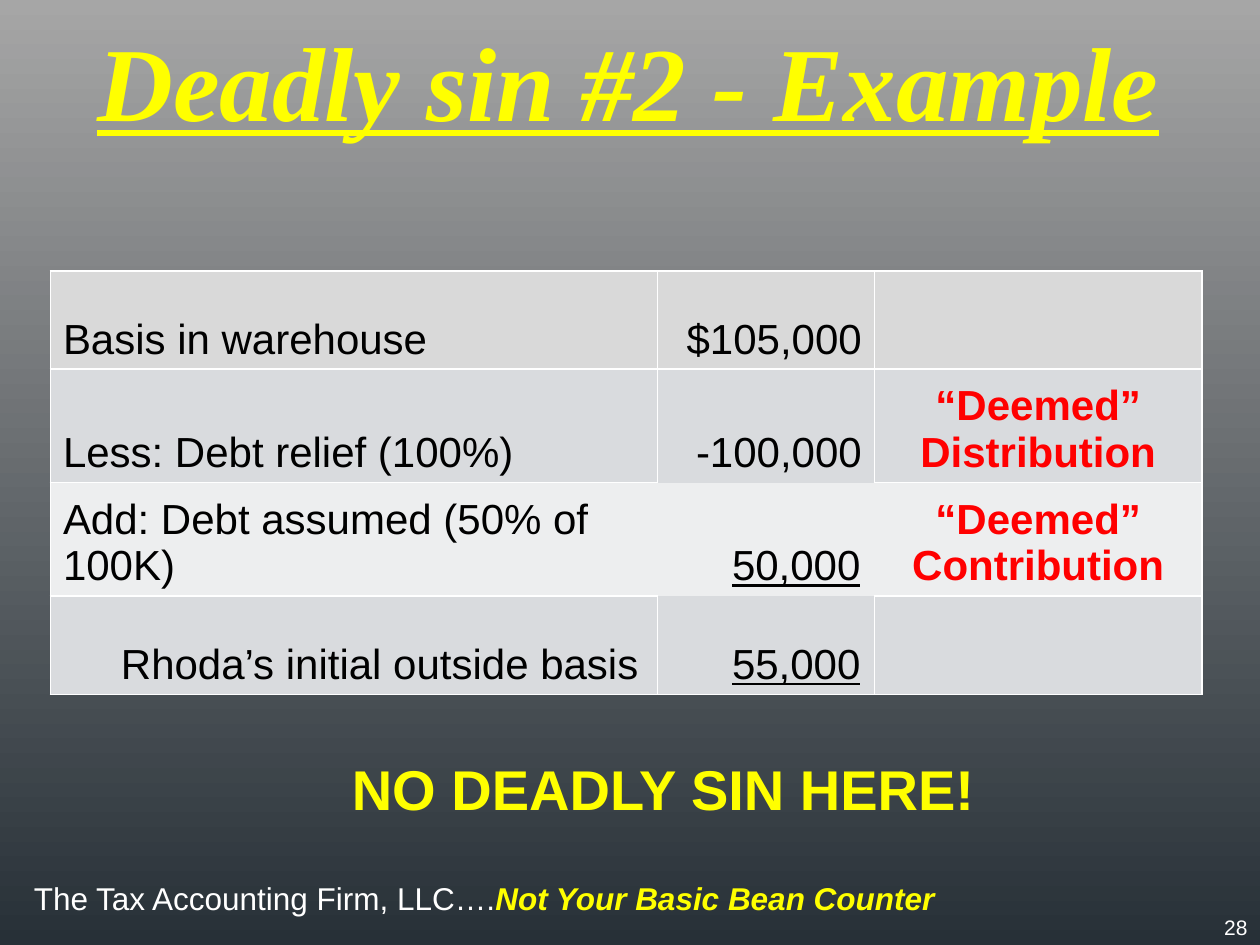
from dataclasses import dataclass

from pptx import Presentation
from pptx.dml.color import RGBColor
from pptx.enum.text import MSO_ANCHOR as Anchor, MSO_AUTO_SIZE as AutoSize, PP_ALIGN as Align
from pptx.oxml import parse_xml
from pptx.oxml.ns import nsdecls
from pptx.util import Inches, Pt


@dataclass(frozen=True)
class Theme:
    body_font: str = "Arial"
    title_font: str = "Times New Roman"
    yellow: str = "FFFF00"
    white: str = "FFFFFF"
    black: str = "000000"
    red: str = "FF0000"
    top: str = "A6A6A6"
    bottom: str = "273037"
    row_fills: tuple = ("D9D9D9", "D9DBDE", "EDEEEF", "D9DBDE")
    title: int = 60
    callout: int = 32
    table: int = 24
    footer: int = 18
    number: int = 12


THEME = Theme()
COLUMN_WIDTHS = (4.82, 1.72, 2.6)
ROW_HEIGHTS = (0.78, 0.9, 0.9, 0.78)
ROWS = (
    ("Basis in warehouse", "$105,000", ""),
    ("Less: Debt relief (100%)", "-100,000", "“Deemed” Distribution"),
    ("Add: Debt assumed (50% of 100K)", "\t50,000", "“Deemed” Contribution"),
    ("Rhoda’s initial outside basis", "\t55,000", ""),
)
OPEN_SIDES = {(1, 1): "B", (2, 0): "R", (2, 1): "LRTB", (2, 2): "L", (3, 1): "T"}


def style_font(font, size, color, name=THEME.body_font, bold=False, italic=False, underline=False):
    font.name, font.size = name, Pt(size)
    font.bold, font.italic, font.underline = bold, italic, underline
    font.color.rgb = RGBColor.from_string(color)


def paint_background(slide):
    fill = slide.background.fill
    fill.gradient()
    fill.gradient_angle = 270
    for stop, color, position in zip(fill.gradient_stops, (THEME.top, THEME.bottom), (0, 1)):
        stop.color.rgb = RGBColor.from_string(color)
        stop.position = position


def add_title(slide, text):
    title = slide.shapes.title
    title.left, title.top = Inches(0.4), Inches(0.08)
    title.width, title.height = Inches(9.17), Inches(1.11)
    frame = title.text_frame
    frame.auto_size = AutoSize.NONE
    frame.vertical_anchor = Anchor.TOP
    paragraph = frame.paragraphs[0]
    paragraph.text = text
    paragraph.alignment = Align.CENTER
    style_font(paragraph.font, THEME.title, THEME.yellow, THEME.title_font, True, True, True)


def add_text(slide, left, top, width, height, text, align=Align.LEFT, anchor=Anchor.TOP):
    box = slide.shapes.add_textbox(Inches(left), Inches(top), Inches(width), Inches(height))
    frame = box.text_frame
    frame.word_wrap = True
    frame.vertical_anchor = anchor
    paragraph = frame.paragraphs[0]
    paragraph.text = text
    paragraph.alignment = align
    return paragraph


def add_footer(slide):
    paragraph = add_text(slide, 0.17, 6.93, 7.59, 0.4, "")
    for text, color, strong in (
        ("The Tax Accounting Firm, LLC….", THEME.white, False),
        ("Not Your Basic Bean Counter", THEME.yellow, True),
    ):
        run = paragraph.add_run()
        run.text = text
        style_font(run.font, THEME.footer, color, bold=strong, italic=strong)


def set_borders(cell, open_sides):
    properties = cell._tc.get_or_add_tcPr()
    for index, side in enumerate("LRTB"):
        paint = "<a:noFill/>"
        if side not in open_sides:
            paint = f'<a:solidFill><a:srgbClr val="{THEME.white}"/></a:solidFill>'
        line = parse_xml(f'<a:ln{side} {nsdecls("a")} w="{Pt(1)}">{paint}</a:ln{side}>')
        properties.insert(index, line)


def set_amount_tab(cell, paragraph):
    cell.margin_left = Inches(0.14)
    position = Inches(COLUMN_WIDTHS[1] - 0.14 - 0.11)
    paragraph._p.get_or_add_pPr().append(
        parse_xml(f'<a:tabLst {nsdecls("a")}><a:tab pos="{position}" algn="r"/></a:tabLst>')
    )


def fill_cell(cell, text, row, column):
    cell.fill.solid()
    cell.fill.fore_color.rgb = RGBColor.from_string(THEME.row_fills[row])
    cell.vertical_anchor = Anchor.BOTTOM
    set_borders(cell, OPEN_SIDES.get((row, column), ""))
    if not text:
        return
    paragraph = cell.text_frame.paragraphs[0]
    paragraph.text = text
    underlined = text.startswith("\t")
    if underlined:
        set_amount_tab(cell, paragraph)
    else:
        paragraph.alignment = (Align.LEFT, Align.RIGHT, Align.CENTER)[column]
    is_note = column == 2
    color = THEME.red if is_note else THEME.black
    style_font(paragraph.font, THEME.table, color, bold=is_note, underline=underlined)


def add_basis_table(slide):
    frame = slide.shapes.add_table(
        len(ROWS), len(COLUMN_WIDTHS), Inches(0.4), Inches(2.15),
        Inches(sum(COLUMN_WIDTHS)), Inches(sum(ROW_HEIGHTS)),
    )
    table = frame.table
    table.first_row = table.horz_banding = False
    for column, width in zip(table.columns, COLUMN_WIDTHS):
        column.width = Inches(width)
    for row, (values, height) in enumerate(zip(ROWS, ROW_HEIGHTS)):
        table.rows[row].height = Inches(height)
        for column, text in enumerate(values):
            fill_cell(table.cell(row, column), text, row, column)
    table.cell(len(ROWS) - 1, 0).margin_left = Inches(0.56)


def main():
    presentation = Presentation()
    presentation.slide_width, presentation.slide_height = Inches(10), Inches(7.5)
    slide = presentation.slides.add_slide(presentation.slide_layouts[5])
    paint_background(slide)
    add_title(slide, "Deadly sin #2 - Example")
    add_footer(slide)
    number = add_text(slide, 8.97, 7.19, 1.03, 0.33, "28", Align.RIGHT, Anchor.MIDDLE)
    style_font(number.font, THEME.number, THEME.white)
    add_basis_table(slide)
    callout = add_text(slide, 1.56, 5.94, 7.41, 0.64, "NO DEADLY SIN HERE!", Align.CENTER)
    style_font(callout.font, THEME.callout, THEME.yellow, bold=True)
    presentation.save("out.pptx")


if __name__ == "__main__":
    main()
